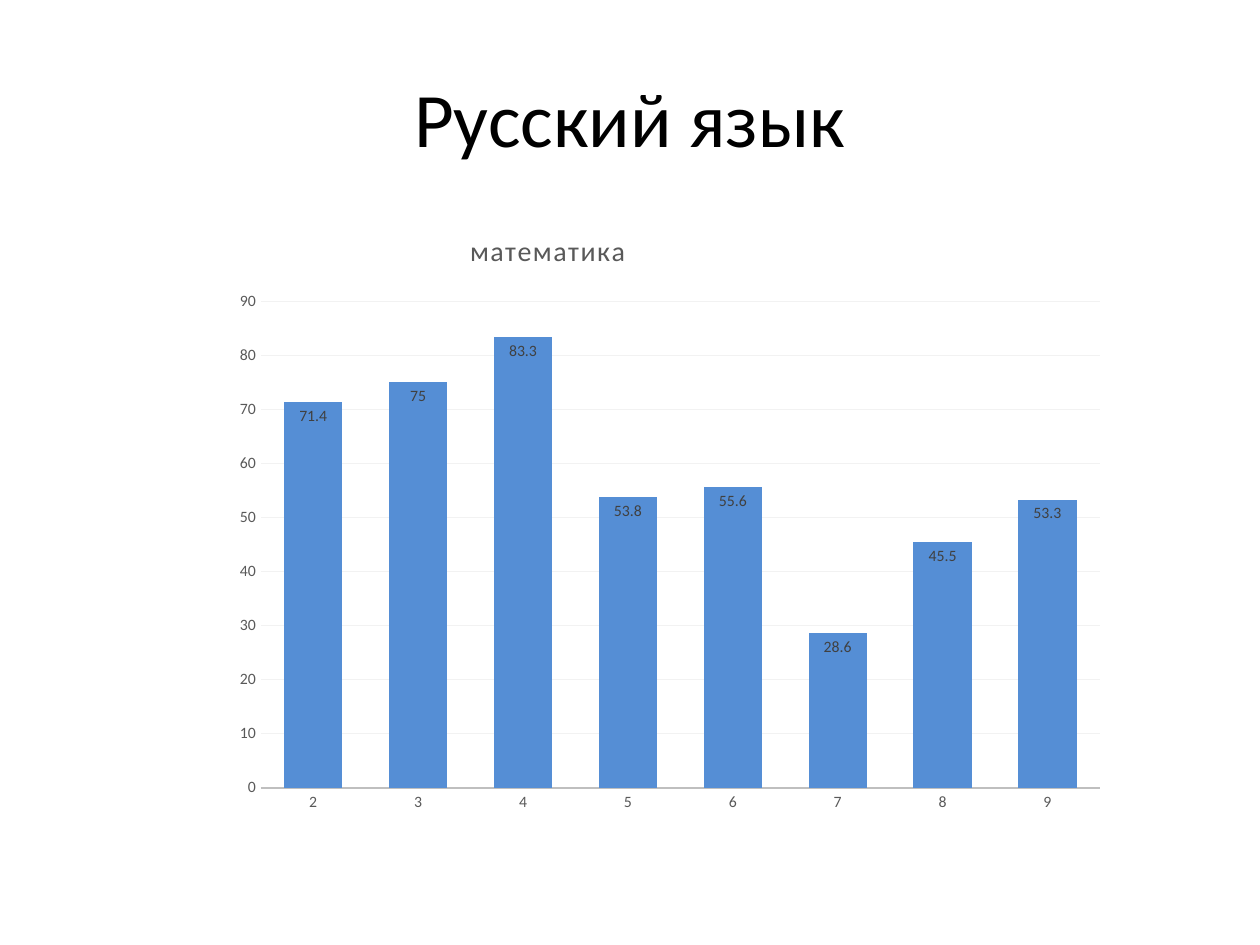
from dataclasses import dataclass

from lxml import etree
from pptx import Presentation
from pptx.chart.data import CategoryChartData
from pptx.dml.color import RGBColor
from pptx.enum.chart import XL_CHART_TYPE, XL_LABEL_POSITION, XL_TICK_MARK
from pptx.enum.text import MSO_ANCHOR, PP_ALIGN
from pptx.oxml.ns import qn
from pptx.util import Inches, Pt

COLUMN_STACKED = XL_CHART_TYPE.COLUMN_STACKED
INSIDE_END = XL_LABEL_POSITION.INSIDE_END
NO_TICKS = XL_TICK_MARK.NONE
CENTER = PP_ALIGN.CENTER
MIDDLE = MSO_ANCHOR.MIDDLE
TITLE_ONLY_LAYOUT = 5


@dataclass(frozen=True)
class Theme:
    font: str = "Calibri"
    background: str = "FFFFFF"
    text: str = "000000"
    muted: str = "595959"
    label: str = "404040"
    bar: str = "558ED5"
    axis: str = "BFBFBF"
    grid: str = "F2F2F2"
    title_size: float = 44
    chart_title_size: float = 16
    chart_size: float = 10
    axis_size: float = 9


THEME = Theme()
TITLE_BOX = (0.5, 0.3, 9, 1.25)
CHART_BOX = (0, 1.55, 9, 4.95)
SCORES = {"2": 71.4, "3": 75, "4": 83.3, "5": 53.8,
          "6": 55.6, "7": 28.6, "8": 45.5, "9": 53.3}


def set_attributes(target, values):
    for name, value in values.items():
        setattr(target, name, value)


def format_font(font, size, color):
    set_attributes(font, {"name": THEME.font, "size": Pt(size), "bold": False})
    font.color.rgb = RGBColor.from_string(color)


def format_line(line, color, width):
    line.color.rgb = RGBColor.from_string(color)
    line.width = Pt(width)


def set_manual_layout(element, index, settings):
    for previous in element.findall(qn("c:layout")):
        element.remove(previous)
    layout = etree.Element(qn("c:layout"))
    manual = etree.SubElement(layout, qn("c:manualLayout"))
    for name, value in settings.items():
        etree.SubElement(manual, qn(f"c:{name}")).set("val", str(value))
    element.insert(index, layout)


def add_title(slide, box, text):
    title = slide.shapes.title
    set_attributes(title, dict(zip(("left", "top", "width", "height"), map(Inches, box))))
    frame = title.text_frame
    set_attributes(frame, {"text": text, "vertical_anchor": MIDDLE, "word_wrap": True})
    paragraph = frame.paragraphs[0]
    paragraph.alignment = CENTER
    format_font(paragraph.runs[0].font, THEME.title_size, THEME.text)


def format_chart_title(chart, text):
    chart.has_title = True
    frame = chart.chart_title.text_frame
    frame.text = text
    format_font(frame.paragraphs[0].runs[0].font, THEME.chart_title_size, THEME.muted)
    title = chart.element.find(".//" + qn("c:title"))
    title.find(".//" + qn("a:rPr")).set("spc", "100")
    set_manual_layout(title, 1, {"xMode": "edge", "yMode": "edge", "x": 0.41, "y": 0.05})


def format_axes(chart):
    for axis in (chart.category_axis, chart.value_axis):
        set_attributes(axis, {"major_tick_mark": NO_TICKS, "minor_tick_mark": NO_TICKS})
        format_font(axis.tick_labels.font, THEME.axis_size, THEME.muted)
    format_line(chart.category_axis.format.line, THEME.axis, 1.25)
    value_axis = chart.value_axis
    set_attributes(value_axis, {"minimum_scale": 0, "maximum_scale": 90, "major_unit": 10})
    value_axis.format.line.fill.background()
    format_line(value_axis.major_gridlines.format.line, THEME.grid, 0.75)


def format_columns(plot):
    set_attributes(plot, {"gap_width": 80, "overlap": 100, "vary_by_categories": False})
    series = plot.series[0]
    series.format.fill.solid()
    series.format.fill.fore_color.rgb = RGBColor.from_string(THEME.bar)
    labels = series.data_labels
    set_attributes(labels, {"show_value": True, "position": INSIDE_END})
    format_font(labels.font, THEME.axis_size, THEME.label)


def add_score_chart(slide, box, title, scores):
    data = CategoryChartData()
    data.categories = list(scores)
    data.add_series("Series 1", list(scores.values()))
    chart = slide.shapes.add_chart(COLUMN_STACKED, *map(Inches, box), data).chart
    chart.has_legend = False
    format_font(chart.font, THEME.chart_size, THEME.text)
    format_chart_title(chart, title)
    format_axes(chart)
    format_columns(chart.plots[0])
    set_manual_layout(chart.element.find(".//" + qn("c:plotArea")), 0, {
        "layoutTarget": "inner", "xMode": "edge", "yMode": "edge",
        "x": 0.23, "y": 0.17, "w": 0.74, "h": 0.78,
    })


def main():
    presentation = Presentation()
    set_attributes(presentation, {"slide_width": Inches(10), "slide_height": Inches(7.5)})
    slide = presentation.slides.add_slide(presentation.slide_layouts[TITLE_ONLY_LAYOUT])
    slide.background.fill.solid()
    slide.background.fill.fore_color.rgb = RGBColor.from_string(THEME.background)
    add_title(slide, TITLE_BOX, "Русский язык")
    add_score_chart(slide, CHART_BOX, "математика", SCORES)
    presentation.save("out.pptx")


if __name__ == "__main__":
    main()
